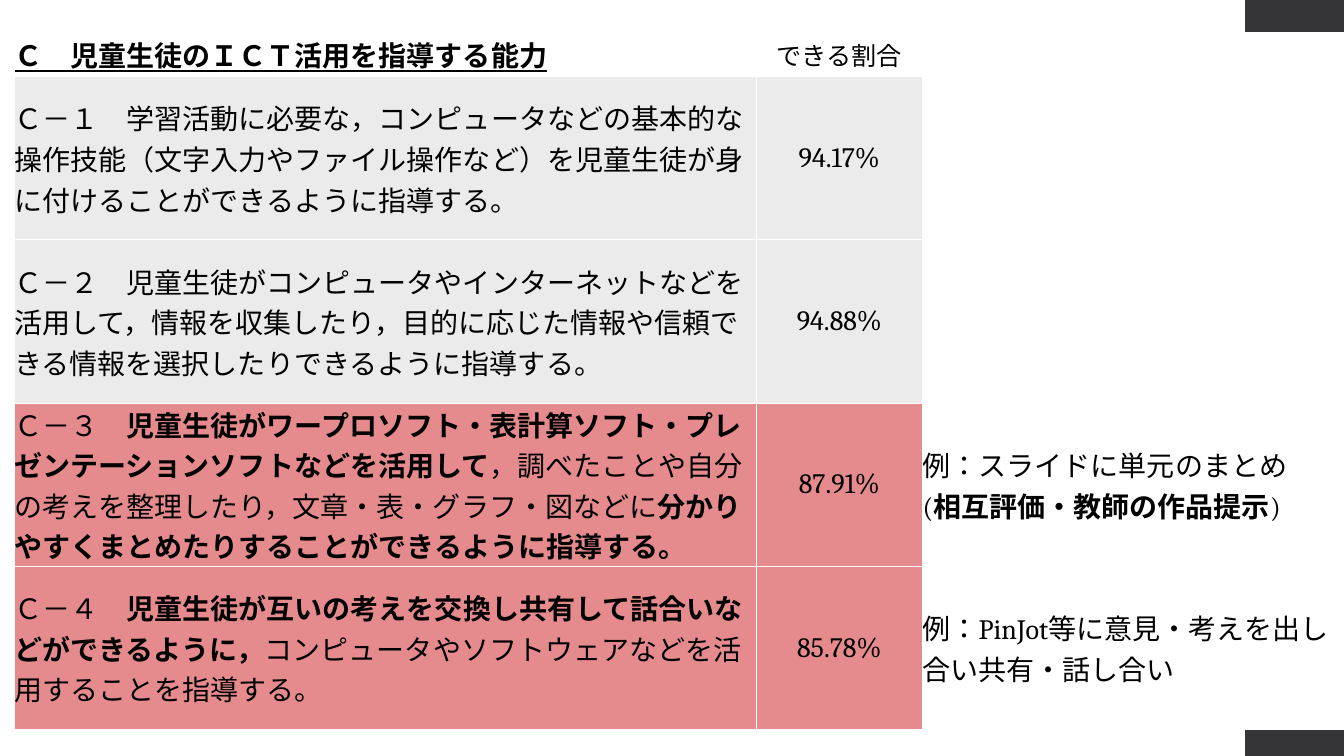
"""Build a slide tabulating teachers' ability to guide pupils' use of ICT."""
import lxml.etree
import pptx
import pptx.dml.color
import pptx.enum.shapes
import pptx.enum.text
import pptx.oxml.ns
import pptx.util

Inches = pptx.util.Inches
WHITE, GREY, RED = "FFFFFF", "EBEBEB", "E58B8D"
LATIN_FONT, JAPANESE_FONT = "Cambria", "Noto Sans CJK JP"


def color(hex_string):
    return pptx.dml.color.RGBColor.from_string(hex_string)


def add_element(parent, tag, **attributes):
    return lxml.etree.SubElement(parent, pptx.oxml.ns.qn(tag), attributes)


presentation = pptx.Presentation()
presentation.slide_width = Inches(13.33)
presentation.slide_height = Inches(7.5)
slide = presentation.slides.add_slide(presentation.slide_layouts[6])

side_bar = slide.shapes.add_shape(
    pptx.enum.shapes.MSO_SHAPE.RECTANGLE, Inches(12.35), 0, Inches(1), Inches(7.5)
)
side_bar.shadow.inherit = False
side_bar.fill.solid()
side_bar.fill.fore_color.rgb = color("353537")
side_bar.line.fill.background()

plain = {"size": pptx.util.Pt(20), "name": LATIN_FONT, "bold": False}
bold = {**plain, "bold": True}
heading = {**bold, "underline": True}
label = {**plain, "size": pptx.util.Pt(18), "name": JAPANESE_FONT}

rows = [
    (WHITE, [("Ｃ　児童生徒のＩＣＴ活用を指導する能力", heading)], [("できる割合", label)], []),
    (
        GREY,
        [("Ｃ－１　学習活動に必要な，コンピュータなどの基本的な操作技能（文字入力やファイル操作など）を児童生徒が身に付けることができるように指導する。", plain)],
        [("94.17%", plain)],
        [],
    ),
    (
        GREY,
        [("Ｃ－２　児童生徒がコンピュータやインターネットなどを活用して，情報を収集したり，目的に応じた情報や信頼できる情報を選択したりできるように指導する。", plain)],
        [("94.88%", plain)],
        [],
    ),
    (
        RED,
        [
            ("Ｃ－３　", plain),
            ("児童生徒がワープロソフト・表計算ソフト・プレゼンテーションソフトなどを活用して", bold),
            ("，調べたことや自分の考えを整理したり，文章・表・グラフ・図などに", plain),
            ("分かりやすくまとめたりすることができるように指導する。", bold),
        ],
        [("87.91%", plain)],
        [("例：スライドに単元のまとめ\v", plain), ("(", plain), ("相互評価・教師の作品提示", bold), (")", plain)],
    ),
    (
        RED,
        [
            ("Ｃ－４　", plain),
            ("児童生徒が互いの考えを交換し共有して話合いなどができるように，", bold),
            ("コンピュータやソフトウェアなどを活用することを指導する。", plain),
        ],
        [("85.78%", plain)],
        [("例：PinJot等に意見・考えを出し合い共有・話し合い", plain)],
    ),
]

table = slide.shapes.add_table(
    len(rows), 3, Inches(0.14), Inches(0.32), Inches(13.18), Inches(6.92)
).table
for column, width in zip(table.columns, (7.36, 1.65, 4.17)):
    column.width = Inches(width)

cell_format = {
    "vertical_anchor": pptx.enum.text.MSO_ANCHOR.MIDDLE,
    "margin_left": 0,
    "margin_right": 0,
    "margin_top": 0,
    "margin_bottom": 0,
}

for row_index, (row_fill, *row_texts) in enumerate(rows):
    table.rows[row_index].height = Inches(1.62 if row_index else 0.44)
    for column_index, runs in enumerate(row_texts):
        cell = table.cell(row_index, column_index)
        for attribute, value in cell_format.items():
            setattr(cell, attribute, value)

        properties = cell._tc.get_or_add_tcPr()
        for side in ("a:lnL", "a:lnR", "a:lnT", "a:lnB"):
            border = add_element(properties, side, w=str(pptx.util.Pt(1)))
            border_fill = add_element(border, "a:solidFill")
            add_element(border_fill, "a:srgbClr", val=WHITE)
        cell.fill.solid()
        cell.fill.fore_color.rgb = color(WHITE if column_index == 2 else row_fill)

        paragraph = cell.text_frame.paragraphs[0]
        if column_index == 1:
            paragraph.alignment = pptx.enum.text.PP_ALIGN.CENTER
        for text, font_format in runs:
            run = paragraph.add_run()
            run.text = text.rstrip("\v")
            for attribute, value in font_format.items():
                setattr(run.font, attribute, value)
            run.font.color.rgb = color("000000")
            run_properties = run._r.get_or_add_rPr()
            run_properties.set("lang", "ja-JP")
            add_element(run_properties, "a:ea", typeface=JAPANESE_FONT)
            if text.endswith("\v"):
                paragraph.add_line_break()

presentation.save("out.pptx")
